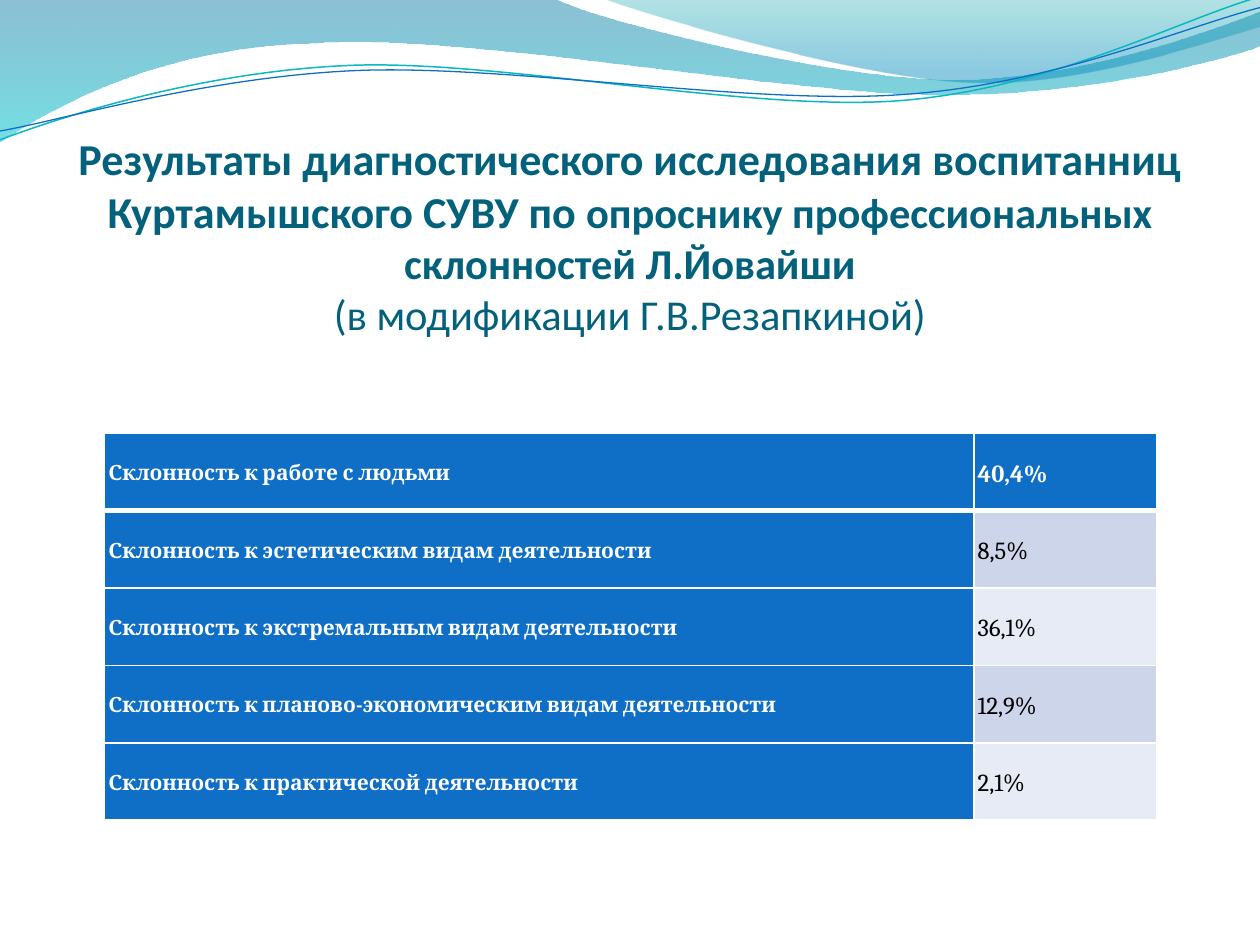
import math

import pptx
import pptx.util
import pptx.dml.color
import pptx.enum.text
import pptx.oxml.ns
from lxml import etree

Inches, Pt = pptx.util.Inches, pptx.util.Pt
RGB = pptx.dml.color.RGBColor.from_string
ALIGN = pptx.enum.text.PP_ALIGN
ANCHOR = pptx.enum.text.MSO_ANCHOR
qn = pptx.oxml.ns.qn

COLORS = {
    "title": "04617B", "blue": "0F6FC6", "teal": "0AB8BF",
    "white": "FFFFFF", "black": "000000",
    "band_dark": "CCD5EA", "band_light": "E7EBF5",
}

presentation = pptx.Presentation()
presentation.slide_width, presentation.slide_height = Inches(10), Inches(7.5)
slide = presentation.slides.add_slide(presentation.slide_layouts[5])


def add_wave(box, steps, close, rotation=0):
    """Draw a path of points (x, y) and cubic curves (x1, y1, x2, y2, x, y)."""
    left, top, width, height = box
    center_x, center_y = left + width / 2, top + height / 2
    cos, sin = math.cos(math.radians(rotation)), math.sin(math.radians(rotation))
    local_steps = []
    for step in steps:
        local = []
        for x, y in zip(step[::2], step[1::2]):
            dx, dy = x - center_x, y - center_y
            local.append((Inches(dx * cos + dy * sin + width / 2),
                          Inches(dy * cos - dx * sin + height / 2)))
        local_steps.append(local)

    builder = slide.shapes.build_freeform(*local_steps[0][-1])
    builder.add_line_segments([local[-1] for local in local_steps[1:]], close=close)
    wave = builder.convert_to_shape()
    wave.shadow.inherit = False
    wave.left, wave.top, wave.width, wave.height = map(Inches, box)
    wave.rotation = rotation

    # Turn the straight segments into curves, measured from the box corner
    outline = next(wave.element.iter(qn("a:path")))
    outline.set("w", str(Inches(width)))
    outline.set("h", str(Inches(height)))
    for segment, local in zip(list(outline), local_steps):
        for point in list(segment):
            segment.remove(point)
        if len(local) == 3:
            segment.tag = qn("a:cubicBezTo")
        for x, y in local:
            etree.SubElement(segment, qn("a:pt"), x=str(x), y=str(y))
    return wave


# Translucent gradient bands: box, path, then (colour, position, opacity) stops
bands = [
    ((-0.01, -0.01, 10.02, 1.14),
     [(0, 0), (4.4, -0.01), (4.76, 0.17, 6.64, 0.63, 7.58, 0.63),
      (8.53, 0.63, 9.58, 0.26, 10, 0.09), (10.01, 0.36),
      (9.83, 0.44, 8.7, 0.76, 7.46, 0.75), (6.22, 0.75, 3.82, 0.28, 2.57, 0.34),
      (1.29, 0.36, 0.46, 0.83, -0.01, 1.13)],
     [("0074A1", 0, 45), ("00C6CF", 1, 55)]),
    ((4.79, -0.01, 5.21, 0.7),
     [(4.79, -0.01), (5.09, 0.11, 6.82, 0.62, 7.69, 0.65),
      (8.56, 0.69, 9.61, 0.32, 10, 0.21), (10, 0)],
     [("00A1A9", 0, 30), ("008BBF", 0.8, 45)]),
]
for box, path, stops in bands:
    band = add_wave(box, path, True)
    band.line.fill.background()
    band.fill.gradient()
    band.fill.gradient_angle = 270
    for stop, (color, position, opacity) in zip(band.fill.gradient_stops, stops):
        stop.color.rgb = RGB(color)
        stop.position = position
    for rgb, (_, _, opacity) in zip(band.element.spPr.iter(qn("a:srgbClr")), stops):
        etree.SubElement(rgb, qn("a:alpha"), val=str(opacity * 1000))

# Thin wave lines
wave_lines = [
    ((-0.02, 0.22, 10.02, 0.71),
     [(0, 1.11), (0.48, 0.93, 1.58, 0.57, 2.77, 0.52),
      (3.95, 0.47, 5.93, 0.89, 7.13, 0.8), (8.33, 0.71, 9.38, 0.15, 9.98, -0.02)],
     "teal", 0.85),
    ((-0.02, 0.3, 10.03, 0.58),
     [(0, 1.04), (0.47, 0.96, 1.64, 0.61, 2.83, 0.56),
      (4.03, 0.51, 5.97, 0.84, 7.17, 0.75), (8.36, 0.67, 9.41, 0.21, 10, 0.06)],
     "blue", 0.75),
]
for box, path, color, width in wave_lines:
    wave_line = add_wave(box, path, False, rotation=357.3)
    wave_line.fill.background()
    wave_line.line.color.rgb = RGB(COLORS[color])
    wave_line.line.width = Pt(width)

# Title
title = slide.shapes.title
title.left, title.top, title.width, title.height = map(Inches, (0.5, 0.77, 9, 2.67))
heading = title.text_frame
heading.word_wrap = True
heading.auto_size = pptx.enum.text.MSO_AUTO_SIZE.NONE
heading.vertical_anchor = ANCHOR.BOTTOM
heading.margin_left = heading.margin_right = 0
heading.margin_top, heading.margin_bottom = Inches(0.05), Inches(0.75)
heading_line = heading.paragraphs[0]
heading_line.alignment = ALIGN.CENTER
heading_line.font.name = "Calibri"
heading_line.font.color.rgb = RGB(COLORS["title"])
for text, size, bold in [
    ("Результаты диагностического исследования воспитанниц Куртамышского СУВУ по ", 25.2, True),
    ("опроснику профессиональных склонностей Л.Йовайши", 24.3, True),
    ("(в модификации Г.В.Резапкиной)", 24.3, False),
]:
    if not bold:
        heading_line.add_line_break()
    part = heading_line.add_run()
    part.text = text
    part.font.size = Pt(size)
    part.font.bold = bold

# Results table
results = [
    ("Склонность к работе с людьми", "40,4%"),
    ("Склонность к эстетическим видам деятельности", "8,5%"),
    ("Склонность к экстремальным видам деятельности", "36,1%"),
    ("Склонность к планово-экономическим видам деятельности", "12,9%"),
    ("Склонность к практической деятельности", "2,1%"),
]
table = slide.shapes.add_table(len(results), 2, Inches(0.83), Inches(3.44),
                               Inches(8.35), Inches(3.07)).table
table.columns[0].width, table.columns[1].width = Inches(6.9), Inches(1.45)
for row, record in enumerate(results):
    for column, text in enumerate(record):
        cell = table.cell(row, column)
        is_value = column == 1
        is_strong = row == 0 or not is_value
        band_color = "band_dark" if row % 2 else "band_light"
        cell.fill.solid()
        cell.fill.fore_color.rgb = RGB(COLORS["blue" if is_strong else band_color])
        cell.vertical_anchor = ANCHOR.MIDDLE
        cell.margin_left = cell.margin_right = Inches(0.03)
        cell.margin_top = cell.margin_bottom = Inches(0.03)

        entry = cell.text_frame.paragraphs[0]
        entry.text = text
        entry.line_spacing = 1.15
        entry.alignment = ALIGN.LEFT if is_value else ALIGN.JUSTIFY
        if is_value:
            entry.space_before = entry.space_after = Pt(4.5)
        entry.font.name = "Cambria"
        entry.font.size = Pt(14 if is_value else 12)
        entry.font.bold = is_strong
        entry.font.color.rgb = RGB(COLORS["white" if is_strong else "black"])

        # White borders, thicker along the header's lower edge
        properties = cell._tc.get_or_add_tcPr()
        for index, side in enumerate(("lnL", "lnR", "lnT", "lnB")):
            thick = (row, side) in ((0, "lnB"), (1, "lnT"))
            border = etree.Element(qn("a:" + side), w=str(Pt(3 if thick else 1)))
            border_fill = etree.SubElement(border, qn("a:solidFill"))
            etree.SubElement(border_fill, qn("a:srgbClr"), val=COLORS["white"])
            properties.insert(index, border)

presentation.save("out.pptx")
